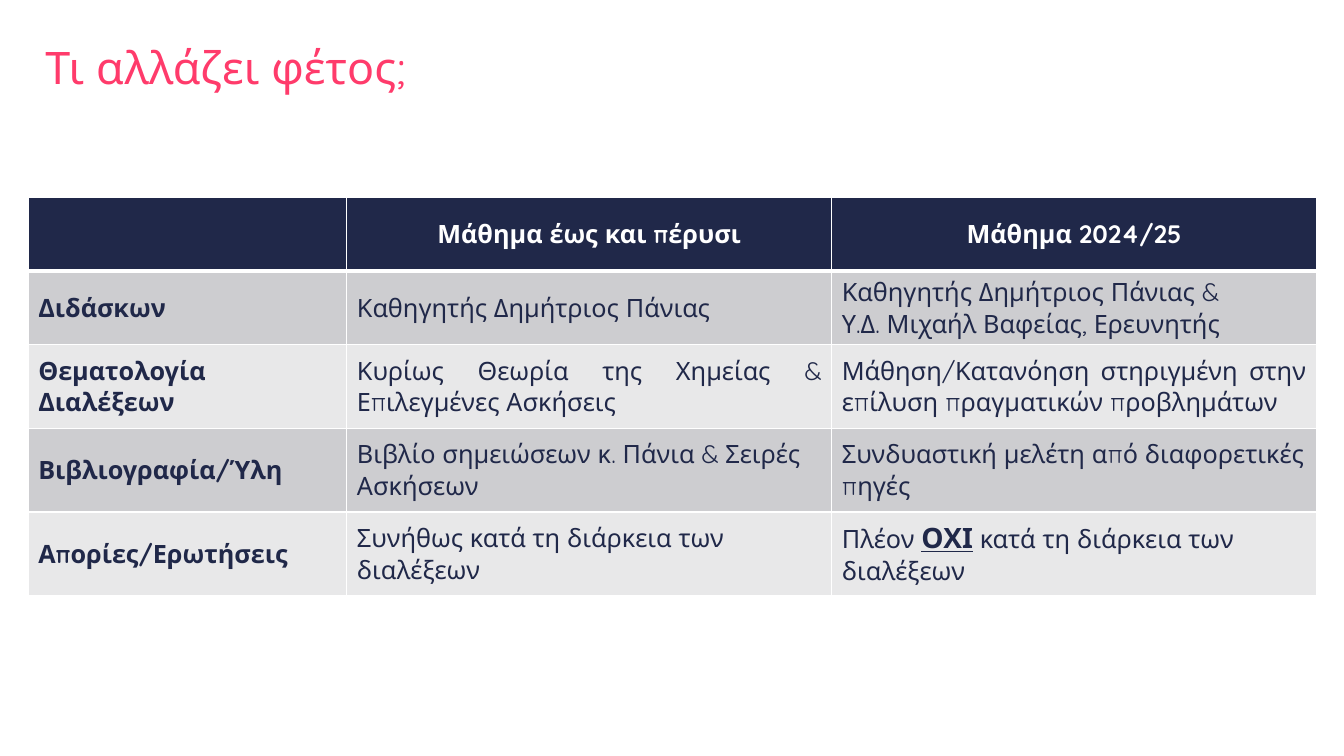
from dataclasses import dataclass

from lxml import etree
from pptx import Presentation
from pptx.dml.color import RGBColor
from pptx.enum import text
from pptx.oxml import ns
from pptx.util import Inches, Pt


@dataclass(frozen=True)
class Theme:
    font: str = "Quicksand"
    title_size: int = 32
    body_size: int = 18
    stress_size: int = 20
    pink: str = "FF3B6B"
    navy: str = "202849"
    white: str = "FFFFFF"
    bands: tuple[str, str] = ("CDCDD0", "E8E8E9")
    thin: int = 1
    thick: int = 3


@dataclass(frozen=True)
class Span:
    words: str
    stressed: bool = False


@dataclass(frozen=True)
class Entry:
    paras: tuple[tuple[Span, ...], ...]
    align: text.PP_ALIGN = text.PP_ALIGN.LEFT


THEME = Theme()
CENTER, JUSTIFY = text.PP_ALIGN.CENTER, text.PP_ALIGN.JUSTIFY


def plain(*lines: str, align: text.PP_ALIGN = text.PP_ALIGN.LEFT) -> Entry:
    return Entry(tuple((Span(line),) for line in lines), align)


# Table content
COLUMNS = (3.16, 4.81, 4.81)
HEIGHTS = (0.73, 0.73, 0.83, 0.83, 0.83)
ROWS = (
    (Entry(()),
     plain("Μάθημα έως και πέρυσι", align=CENTER),
     plain("Μάθημα 2024/25", align=CENTER)),
    (plain("Διδάσκων"),
     plain("Καθηγητής Δημήτριος Πάνιας", align=JUSTIFY),
     plain("Καθηγητής Δημήτριος Πάνιας &", "Υ.Δ. Μιχαήλ Βαφείας, Ερευνητής", align=JUSTIFY)),
    (plain("Θεματολογία Διαλέξεων"),
     plain("Κυρίως Θεωρία της Χημείας & Επιλεγμένες Ασκήσεις", align=JUSTIFY),
     plain("Μάθηση/Κατανόηση στηριγμένη στην επίλυση πραγματικών προβλημάτων", align=JUSTIFY)),
    (plain("Βιβλιογραφία/Ύλη"),
     plain("Βιβλίο σημειώσεων κ. Πάνια & Σειρές Ασκήσεων"),
     plain("Συνδυαστική μελέτη από διαφορετικές πηγές")),
    (plain("Απορίες/Ερωτήσεις"),
     plain("Συνήθως κατά τη διάρκεια των διαλέξεων"),
     Entry(((Span("Πλέον "), Span("ΟΧΙ", True), Span(" κατά τη διάρκεια των διαλέξεων")),))),
)


def add_span(para, words: str, size: int, color: str, bold: bool = False):
    run = para.add_run()
    run.text = words
    run.font.name = THEME.font
    run.font.size = Pt(size)
    run.font.bold = bold
    run.font.color.rgb = RGBColor.from_string(color)
    return run


def set_borders(cell, top: int, bottom: int) -> None:
    properties = cell._tc.get_or_add_tcPr()
    edges = (("lnL", THEME.thin), ("lnR", THEME.thin), ("lnT", top), ("lnB", bottom))
    for index, (edge, width) in enumerate(edges):
        line = etree.Element(ns.qn(f"a:{edge}"), w=str(int(Pt(width))))
        fill = etree.SubElement(line, ns.qn("a:solidFill"))
        etree.SubElement(fill, ns.qn("a:srgbClr"), val=THEME.white)
        properties.insert(index, line)


def fill_cell(cell, entry: Entry, row: int, column: int) -> None:
    header = row == 0
    cell.fill.solid()
    cell.fill.fore_color.rgb = RGBColor.from_string(
        THEME.navy if header else THEME.bands[(row - 1) % 2])
    set_borders(cell, THEME.thick if row == 1 else THEME.thin,
                THEME.thick if header else THEME.thin)
    cell.vertical_anchor = text.MSO_ANCHOR.MIDDLE
    for number, spans in enumerate(entry.paras):
        frame = cell.text_frame
        para = frame.add_paragraph() if number else frame.paragraphs[0]
        para.alignment = entry.align
        for span in spans:
            run = add_span(para, span.words,
                           THEME.stress_size if span.stressed else THEME.body_size,
                           THEME.white if header else THEME.navy,
                           header or column == 0 or span.stressed)
            if span.stressed:
                run.font.underline = True


def add_title(page, words: str) -> None:
    title = page.shapes.title
    title.left, title.top = Inches(0.35), Inches(0.4)
    title.width, title.height = Inches(11.5), Inches(1.07)
    frame = title.text_frame
    frame.word_wrap = True
    frame.vertical_anchor = text.MSO_ANCHOR.TOP
    para = frame.paragraphs[0]
    para.alignment = text.PP_ALIGN.LEFT
    para.line_spacing = 0.9
    add_span(para, words, THEME.title_size, THEME.pink)


def add_comparison(page) -> None:
    table = page.shapes.add_table(
        len(ROWS), len(COLUMNS), Inches(0.28), Inches(1.96),
        Inches(sum(COLUMNS)), Inches(sum(HEIGHTS))).table
    for column, width in zip(table.columns, COLUMNS):
        column.width = Inches(width)
    for row, height in zip(table.rows, HEIGHTS):
        row.height = Inches(height)
    for row, entries in enumerate(ROWS):
        for column, entry in enumerate(entries):
            fill_cell(table.cell(row, column), entry, row, column)


def main() -> None:
    deck = Presentation()
    deck.slide_width, deck.slide_height = Inches(13.33), Inches(7.5)
    page = deck.slides.add_slide(deck.slide_layouts.get_by_name("Title Only"))
    add_title(page, "Τι αλλάζει φέτος;")
    add_comparison(page)
    deck.save("out.pptx")


if __name__ == "__main__":
    main()
